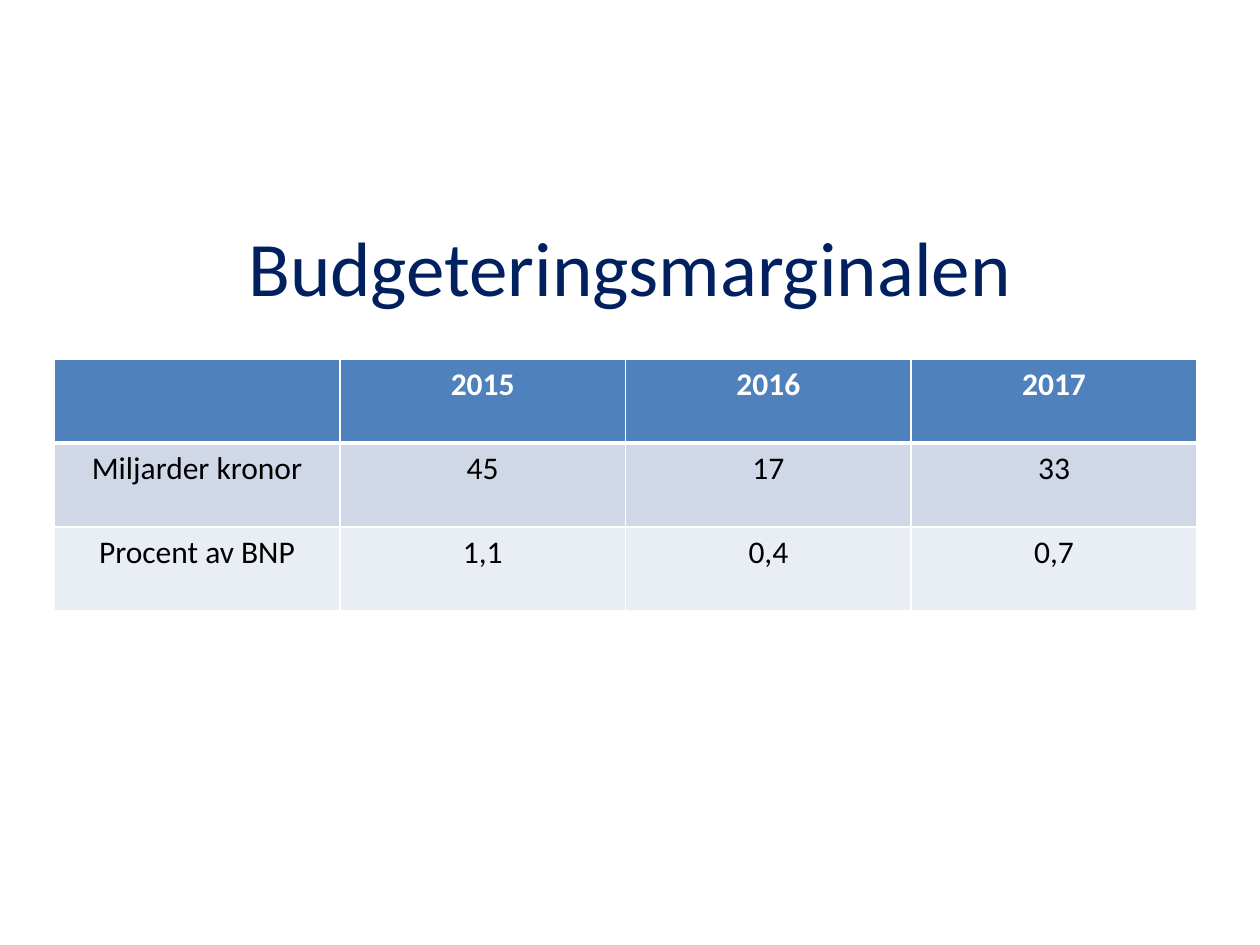
from dataclasses import dataclass

from lxml import etree
from pptx import Presentation
from pptx.dml.color import RGBColor
from pptx.enum.text import MSO_ANCHOR, PP_ALIGN
from pptx.oxml.ns import qn
from pptx.util import Inches, Pt

CENTER = PP_ALIGN.CENTER
MIDDLE = MSO_ANCHOR.MIDDLE
TITLE_ONLY = 5

TITLE = "Budgeteringsmarginalen"
ROWS = [
    ("", "2015", "2016", "2017"),
    ("Miljarder kronor", "45", "17", "33"),
    ("Procent av BNP", "1,1", "0,4", "0,7"),
]


@dataclass(frozen=True)
class Theme:
    font: str = "Calibri"
    title_size: int = 44
    cell_size: int = 18
    title: str = "002060"
    header_text: str = "FFFFFF"
    body_text: str = "000000"
    border: str = "FFFFFF"
    row_fills: tuple = ("4F81BD", "D0D8E8", "E9EDF4")
    thin: int = 1
    thick: int = 3


THEME = Theme()
SLIDE_W, SLIDE_H = 10, 7.5
TITLE_BOX = (0.5, 1.48, 9, 1.25)
TABLE_BOX = (0.43, 2.85, 9.07, 2)


def write(tf, text, size, color, bold=False):
    p = tf.paragraphs[0]
    p.alignment = CENTER
    font = p.font
    if text:
        r = p.add_run()
        r.text = text
        font = r.font
    for name, value in {"name": THEME.font, "size": Pt(size), "bold": bold}.items():
        setattr(font, name, value)
    font.color.rgb = RGBColor.from_string(color)


def add_borders(cell, widths):
    """Draw the cell's sides; widths maps L, R, T and B to points."""
    tc_pr = cell._tc.get_or_add_tcPr()
    for side, width in widths.items():
        ln = etree.SubElement(tc_pr, qn(f"a:ln{side}"), w=str(Pt(width)))
        fill = etree.SubElement(ln, qn("a:solidFill"))
        etree.SubElement(fill, qn("a:srgbClr"), val=THEME.border)


def add_title(slide):
    title = slide.shapes.title
    title.left, title.top, title.width, title.height = map(Inches, TITLE_BOX)
    title.text_frame.vertical_anchor = MIDDLE
    write(title.text_frame, TITLE, THEME.title_size, THEME.title)


def add_budget_table(slide):
    table = slide.shapes.add_table(
        len(ROWS), len(ROWS[0]), *map(Inches, TABLE_BOX)).table
    for i, values in enumerate(ROWS):
        header = i == 0
        widths = {
            "L": THEME.thin,
            "R": THEME.thin,
            "T": THEME.thick if i == 1 else THEME.thin,
            "B": THEME.thick if header else THEME.thin,
        }
        color = THEME.header_text if header else THEME.body_text
        for j, value in enumerate(values):
            cell = table.cell(i, j)
            add_borders(cell, widths)
            cell.fill.solid()
            cell.fill.fore_color.rgb = RGBColor.from_string(THEME.row_fills[i])
            write(cell.text_frame, value, THEME.cell_size, color, header)


def main():
    prs = Presentation()
    prs.slide_width, prs.slide_height = Inches(SLIDE_W), Inches(SLIDE_H)
    slide = prs.slides.add_slide(prs.slide_layouts[TITLE_ONLY])
    add_title(slide)
    add_budget_table(slide)
    prs.save("out.pptx")


if __name__ == "__main__":
    main()
